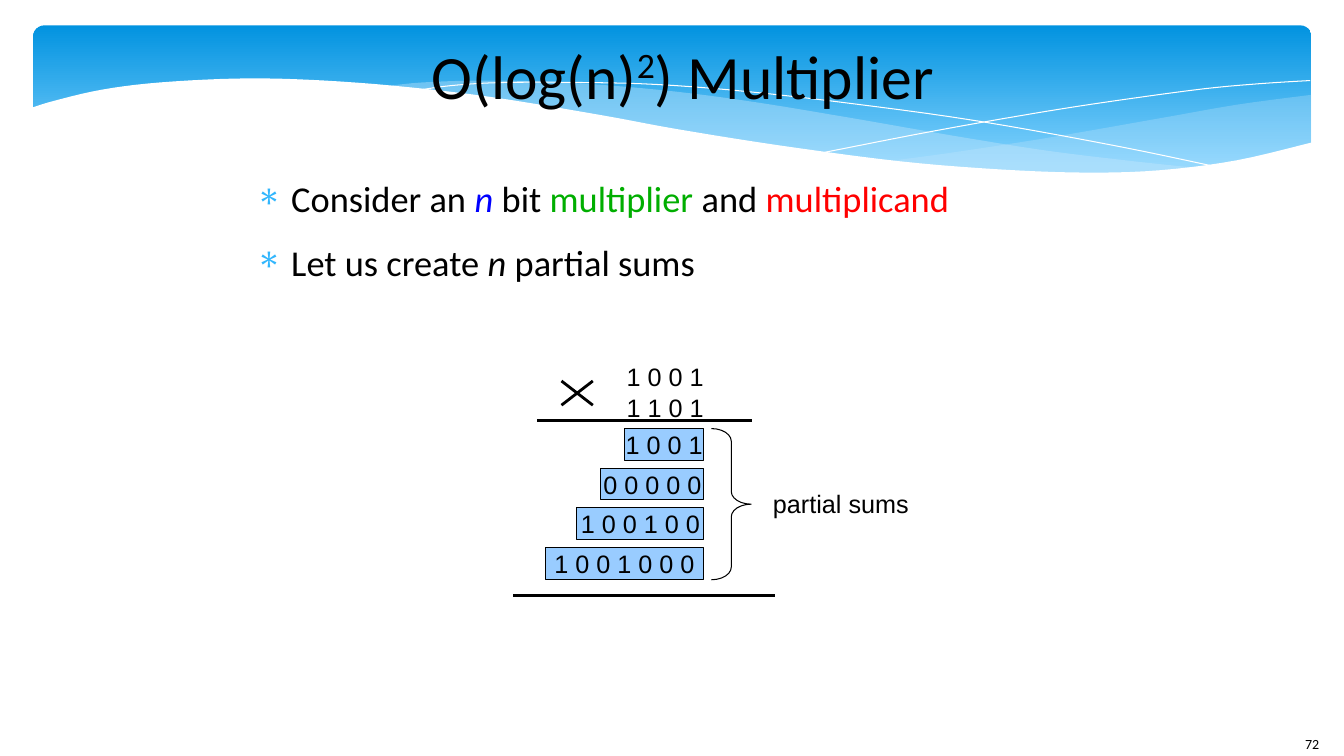
from itertools import pairwise

from lxml.etree import SubElement
from pptx import Presentation
from pptx.dml.color import RGBColor
from pptx.enum.shapes import MSO_CONNECTOR, MSO_SHAPE
from pptx.enum.text import MSO_ANCHOR, PP_ALIGN
from pptx.oxml.ns import qn
from pptx.util import Cm, Pt

BLACK, WHITE, SKY = "000000", "FFFFFF", "C6E7FC"
TITLE = [("O(log(n)", {}), ("2", {"baseline": "33000"}), (") Multiplier", {})]
BULLETS = [
    [("Consider an ", {}), ("n ", {"italic": True, "color": "0000FF"}), ("bit ", {}),
     ("multiplier", {"color": "00AE00"}), (" and ", {}), ("multiplicand", {"color": "FF0000"})],
    [("Let us create ", {}), ("n", {"italic": True}), (" partial sums", {})],
]
OPERANDS = ["1 0 0 1", "1 1 0 1"]
PARTIAL_SUMS = [("1 0 0 1", 2), ("0 0 0 0 0", 2.6), ("1 0 0 1 0 0", 3.2), ("1 0 0 1 0 0 0", 4)]
RULES = [(13.54, 10.59, 18.95, 10.59), (14.15, 9.6, 14.94, 10.21),
         (14.94, 9.6, 14.15, 10.21), (12.93, 15.01, 19.53, 15.01)]
SUMS_RIGHT, SUMS_TOP, SUMS_PITCH, SUM_HEIGHT = 17.74, 10.8, 1, 0.8
TITLE_FONT = {"size": Pt(44), "name": "Calibri"}
BODY_FONT = {"size": Pt(26), "name": "Calibri"}
DIGIT_FONT = {"size": Pt(18), "name": "Arial"}
NUMBER_FONT = {"size": Pt(10), "name": "Calibri"}

RIGHT_WAVE = [
    [(33.05, 2.39), (31.17, 2.64), (29.13, 3), (26.37, 3.48), (23.9, 3.86), (22.4, 4.06)],
    [(22.4, 4.06), (23.88, 4.19), (25.63, 4.32), (27.56, 4.37), (29.54, 4.29), (31.19, 4.06),
     (33.05, 3.61)],
]
MIDDLE_WAVE = [
    [(30.23, 4.24), (28.35, 4.04), (26.26, 3.78), (23.9, 3.4), (21.31, 2.95), (18.8, 2.54),
     (16.56, 2.26), (14.22, 2.08), (12.24, 2.03), (10.62, 2.08), (9.7, 2.18)],
    [(9.7, 2.18), (11.58, 2.39), (13.69, 2.69), (16.61, 3.2), (19.18, 3.63), (21.49, 3.96),
     (23.52, 4.19), (25.76, 4.34), (27.69, 4.39), (29.36, 4.32), (30.23, 4.24)],
]
FALLING_LINE = [[(10.46, 2.29), (11.35, 2.16), (12.67, 2.08), (14.66, 2.08), (16.56, 2.13),
                 (18.85, 2.31), (21.54, 2.62), (24.64, 3.05), (28.14, 3.68), (30.73, 4.22)]]
RISING_LINE = [[(20.78, 3.84), (23.55, 3.3), (26.29, 2.82), (28.32, 2.51), (30.33, 2.24),
                (31.75, 2.11), (33.02, 2.03)]]
WHITE_WAVE = [
    [(33.1, 3.58), (31.17, 4.04), (29.24, 4.29), (27.38, 4.35), (25.2, 4.27), (22.63, 4.06),
     (19.61, 3.66), (17.04, 3.25), (15.14, 2.9), (12.34, 2.44), (9.91, 2.16), (7.77, 2.01),
     (5.97, 1.98), (4.01, 2.08), (2.57, 2.26), (1.37, 2.54), (0.79, 2.72)],
    [(0.79, 5.69), (33.1, 5.69)],
]
WAVES = [(RIGHT_WAVE, SKY, 29), (MIDDLE_WAVE, SKY, 40), (FALLING_LINE, None, 100),
         (RISING_LINE, None, 100), (WHITE_WAVE, WHITE, 100)]


def paint(target, color):
    target.rgb = RGBColor.from_string(color)


def fill_with(shape, color):
    shape.fill.solid()
    paint(shape.fill.fore_color, color)


def outline(shape, color):
    paint(shape.line.color, color)
    shape.line.width = Pt(0)


def smooth_edge(knots, steps=5):
    padded = [knots[0], *knots, knots[-1]]
    points = [knots[0]]
    for i, (start, end) in enumerate(pairwise(knots)):
        before, after = padded[i], padded[i + 3]
        for step in range(1, steps + 1):
            t = step / steps
            points.append(tuple(
                b + t * (c - a) / 2 + t * t * (2 * a - 5 * b + 4 * c - d) / 2
                + t ** 3 * (3 * b - a - 3 * c + d) / 2
                for a, b, c, d in zip(before, start, end, after)))
    return points


def add_wave(shapes, edges, color, opacity):
    first, *rest = [(Cm(x), Cm(y)) for edge in edges for x, y in smooth_edge(edge)]
    builder = shapes.build_freeform(*first, scale=1.0)
    builder.add_line_segments(rest, close=color is not None)
    wave = builder.convert_to_shape()
    wave.shadow.inherit = False
    if color is None:
        wave.fill.background()
        outline(wave, WHITE)
        return
    fill_with(wave, color)
    wave.line.fill.background()
    if opacity < 100:
        tint = wave.fill._xPr.find(".//" + qn("a:srgbClr"))
        SubElement(tint, qn("a:alpha"), val=str(opacity * 1000))


def write(paragraph, pieces, base):
    for text, changes in pieces:
        run = paragraph.add_run()
        run.text = text
        for key, value in {"color": BLACK, **base, **changes}.items():
            if key == "color":
                paint(run.font.color, value)
            elif key == "baseline":
                run.font._element.set(key, value)
            else:
                setattr(run.font, key, value)


def write_lines(frame, lines, font, align=PP_ALIGN.LEFT, **layout):
    for key, value in layout.items():
        setattr(frame, key, value)
    for i, pieces in enumerate(lines):
        paragraph = frame.add_paragraph() if i else frame.paragraphs[0]
        paragraph.alignment = align
        write(paragraph, pieces, font)
    return frame


def add_text(shapes, place, lines, font, **layout):
    box = shapes.add_textbox(*map(Cm, place))
    return write_lines(box.text_frame, lines, font, **layout)


def add_preset(shapes, kind, *place):
    shape = shapes.add_shape(kind, *map(Cm, place))
    shape.shadow.inherit = False
    return shape


def add_banner(shapes):
    banner = add_preset(shapes, MSO_SHAPE.ROUNDED_RECTANGLE, 0.84, 0.64, 32.21, 3.96)
    banner.adjustments[0] = 0.07
    banner.line.fill.background()
    banner.fill.gradient()
    banner.fill.gradient_angle = 270
    for stop, (position, color) in zip(banner.fill.gradient_stops, [(0, "0293E0"), (0.9, "83D3FE")]):
        stop.position = position
        paint(stop.color, color)
    for wave in WAVES:
        add_wave(shapes, *wave)


def add_bullets(shapes, flush):
    body = add_text(shapes, (6.15, 4.45, 22, 4.37), BULLETS, BODY_FONT, word_wrap=True, **flush)
    for paragraph in body.paragraphs:
        paragraph.space_after = Pt(14.1)
        properties = paragraph._p.get_or_add_pPr()
        properties.set("marL", str(Cm(1.19)))
        properties.set("indent", str(Cm(-0.89)))
        tint = SubElement(properties, qn("a:buClr"))
        SubElement(tint, qn("a:srgbClr"), val="31B6FD")
        SubElement(properties, qn("a:buChar"), char="∗")


def add_multiplication(shapes):
    add_text(shapes, (15.54, 8.99, 2.46, 1.73), [[(line, {})] for line in OPERANDS],
             DIGIT_FONT, word_wrap=False)
    for rule in RULES:
        line = shapes.add_connector(MSO_CONNECTOR.STRAIGHT, *map(Cm, rule))
        outline(line, BLACK)
        SubElement(line._element.spPr, qn("a:effectLst"))
    for row, (digits, width) in enumerate(PARTIAL_SUMS):
        partial = add_preset(shapes, MSO_SHAPE.RECTANGLE, SUMS_RIGHT - width,
                             SUMS_TOP + row * SUMS_PITCH, width, SUM_HEIGHT)
        fill_with(partial, "99CCFF")
        outline(partial, BLACK)
        write_lines(partial.text_frame, [[(digits, {})]], DIGIT_FONT, align=PP_ALIGN.CENTER,
                    vertical_anchor=MSO_ANCHOR.MIDDLE, word_wrap=False)
    brace = add_preset(shapes, MSO_SHAPE.RIGHT_BRACE, 17.93, SUMS_TOP, 1, 3.81)
    brace.adjustments[0] = 0.32
    brace.fill.background()
    outline(brace, BLACK)
    add_text(shapes, (19.23, 12.19, 3.96, 0.99), [[("partial sums", {})]], DIGIT_FONT, word_wrap=False)


def main():
    """Build the multiplier slide."""
    deck = Presentation()
    deck.slide_width, deck.slide_height = Cm(33.87), Cm(19.05)
    shapes = deck.slides.add_slide(deck.slide_layouts[6]).shapes
    flush = dict.fromkeys(["margin_left", "margin_top", "margin_right", "margin_bottom"], 0)
    add_banner(shapes)
    add_text(shapes, (32.64, 18.42, 1.22, 0.6), [[("72", {})]], NUMBER_FONT, word_wrap=False)
    add_text(shapes, (6.91, 0.58, 20.6, 2.59), [TITLE], TITLE_FONT, align=PP_ALIGN.CENTER,
             vertical_anchor=MSO_ANCHOR.MIDDLE, word_wrap=True, **flush)
    add_bullets(shapes, flush)
    add_multiplication(shapes)
    deck.save("out.pptx")


if __name__ == "__main__":
    main()
